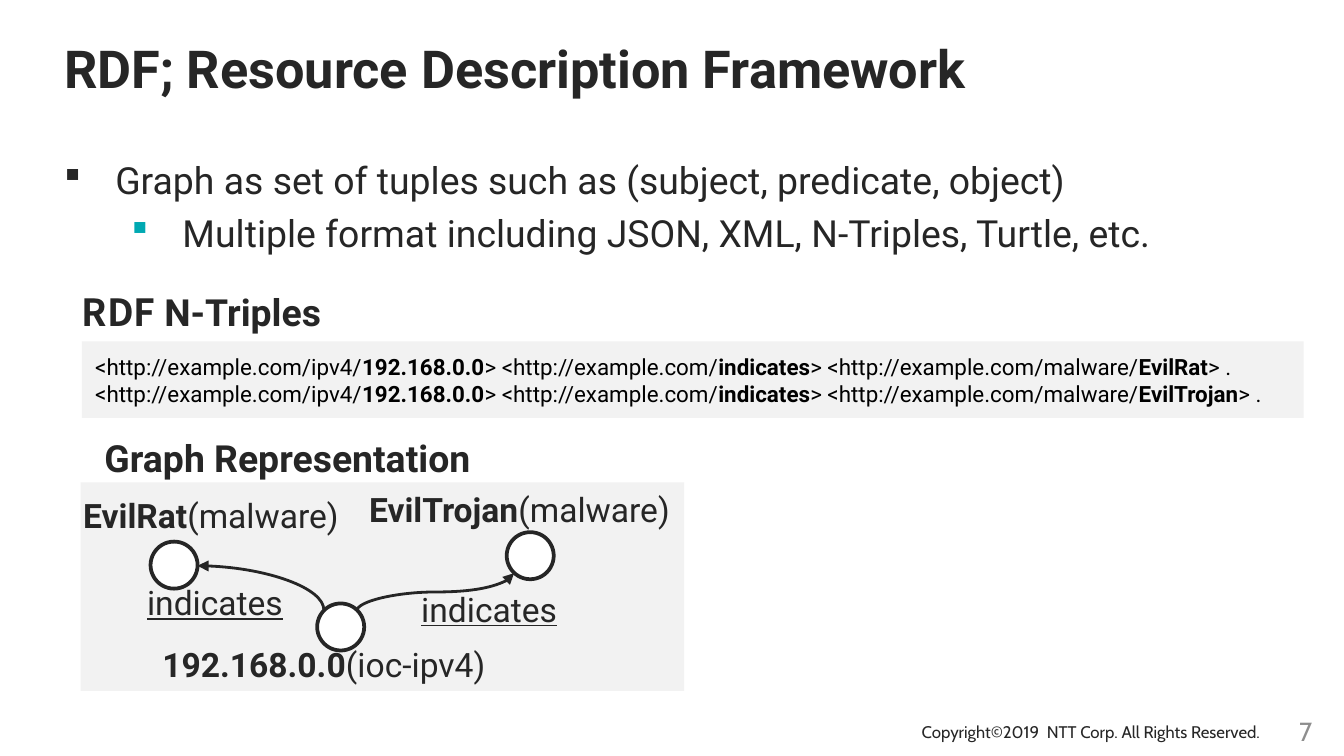
"""Build a slide on RDF: bullets, an N-Triples listing and its graph."""
from pptx import Presentation
from pptx import util as u
from pptx.dml.color import RGBColor
from pptx.enum import shapes, text
from pptx.oxml import parse_xml
from pptx.oxml.ns import nsdecls, qn

INK, PANEL, WHITE, TEAL = "262626", "F2F2F2", "FFFFFF", "00A9B2"
CENTER = text.PP_ALIGN.CENTER


def paint(color_format, color):
    color_format.rgb = RGBColor.from_string(color)


def write(box, words, size=18, color=INK, font="Roboto", align=text.PP_ALIGN.LEFT,
          wrap=True, anchor=text.MSO_ANCHOR.TOP, underline=None):
    """Fill a box, one paragraph per line, with **double stars** marking bold."""
    frame = box.text_frame
    frame.word_wrap = wrap
    frame.vertical_anchor = anchor
    for index, line in enumerate(words.split("\n")):
        para = frame.add_paragraph() if index else frame.paragraphs[0]
        para.alignment = align
        for order, part in enumerate(line.split("**")):
            if part:
                span = para.add_run()
                span.text = part
                span.font.name = font
                span.font.size = u.Pt(size)
                span.font.bold = order % 2 == 1
                span.font.underline = underline
                paint(span.font.color, color)
    return frame


deck = Presentation()
deck.slide_width, deck.slide_height = u.Inches(10), u.Inches(10 * 9 / 16)
page = deck.slides.add_slide(deck.slide_layouts[6])

panels = []
for left, top, width, height in [(0.61, 2.54, 9.09, 0.57), (0.6, 3.59, 4.49, 1.55)]:
    panel = page.shapes.add_shape(shapes.MSO_SHAPE.RECTANGLE, *map(u.Inches, (left, top, width, height)))
    panel.shadow.inherit = False
    panel.fill.solid()
    paint(panel.fill.fore_color, PANEL)
    panel.line.fill.background()
    panels.append(panel)

triples = "\n".join(
    "<http://example.com/ipv4/**192.168.0.0**> <http://example.com/**indicates**> "
    f"<http://example.com/malware/**{malware}**> ."
    for malware in ("EvilRat", "EvilTrojan"))
write(panels[0], triples, size=12, color="000000", wrap=False, anchor=text.MSO_ANCHOR.MIDDLE)

for left, top in [(1.12, 4.03), (2.36, 4.49), (3.77, 3.96)]:
    node = page.shapes.add_shape(shapes.MSO_SHAPE.OVAL, *map(u.Inches, (left, top, 0.35, 0.35)))
    node.shadow.inherit = False
    node.fill.solid()
    paint(node.fill.fore_color, WHITE)
    paint(node.line.color, INK)
    node.line.width = u.Pt(2)

edges = [
    ((1.47, 4.21, 2.41, 4.54), "curvedConnector2", 0),
    ((3.1, 3.82, 3.38, 4.99), "curvedConnector3", 90),
]
for ends, geometry, degrees in edges:
    edge = page.shapes.add_connector(shapes.MSO_CONNECTOR.CURVE, *map(u.Inches, ends))
    paint(edge.line.color, INK)
    edge.line.width = u.Pt(1.5)
    properties = edge._element.spPr
    properties.find(qn("a:prstGeom")).set("prst", geometry)
    properties.find(qn("a:xfrm")).set("rot", str(degrees * 60000))
    edge.line._get_or_add_ln().append(parse_xml(f'<a:headEnd {nsdecls("a")} type="triangle"/>'))
    properties.append(parse_xml(f'<a:effectLst {nsdecls("a")}/>'))

labels = [
    ((0.38, 0.22, 7.59, 0.52), "**RDF; Resource Description Framework**", dict(size=28)),
    ((0.6, 3.19, 3.08, 0.44), "**Graph Representation**", dict(size=20, align=CENTER, wrap=False)),
    ((0.52, 3.63, 2.1, 0.4), "**EvilRat**(malware)", dict(align=CENTER, wrap=False)),
    ((2.49, 3.59, 2.75, 0.4), "**EvilTrojan**(malware)", dict(align=CENTER)),
    ((0.84, 4.74, 3.14, 0.4), "**192.168.0.0**(ioc-ipv4)", dict(align=CENTER)),
    ((0.93, 4.28, 1.34, 0.4), "indicates", dict(align=CENTER, underline=True)),
    ((2.94, 4.33, 1.4, 0.4), "indicates", dict(align=CENTER, underline=True)),
    ((6.76, 5.32, 2.74, 0.25), "Copyright©2019  NTT Corp. All Rights Reserved.",
     dict(size=9, font="Cabin", wrap=False)),
    ((9.46, 5.24, 0.51, 0.4), "7",
     dict(size=14, font="Cabin", color="8E8E8E", align=CENTER, anchor=text.MSO_ANCHOR.MIDDLE)),
]
for place, words, style in labels:
    write(page.shapes.add_textbox(*map(u.Inches, place)), words, **style)

heading = page.shapes.add_textbox(*map(u.Inches, (0.51, 2.1, 2.1, 0.44)))
frame = write(heading, "**RDF ****N-Triples**", size=20, wrap=False)
frame.paragraphs[0].runs[0].font.name = "Noto Sans CJK JP"

body = page.shapes.add_textbox(*map(u.Inches, (0.38, 1.09, 9.24, 4.02)))
frame = write(body, "Graph as set of tuples such as (subject, predicate, object)\n"
              "Multiple format including JSON, XML, N-Triples, Turtle, etc.", size=20)
for level, (para, color) in enumerate(zip(frame.paragraphs, (INK, TEAL))):
    para.level = level
    para.line_spacing = 1.1
    para.space_before = para.space_after = u.Pt(2 * level)
    properties = para._p.get_or_add_pPr()
    properties.set("marL", str(u.Inches(0.38 + 0.5 * level)))
    properties.set("indent", str(u.Inches(-0.38)))
    for bullet in (f'buClr {nsdecls("a")}><a:srgbClr val="{color}"/></a:buClr',
                   f'buFont {nsdecls("a")} typeface="Wingdings"/',
                   f'buChar {nsdecls("a")} char="§"/'):
        properties.append(parse_xml(f"<a:{bullet}>"))

deck.save("out.pptx")
